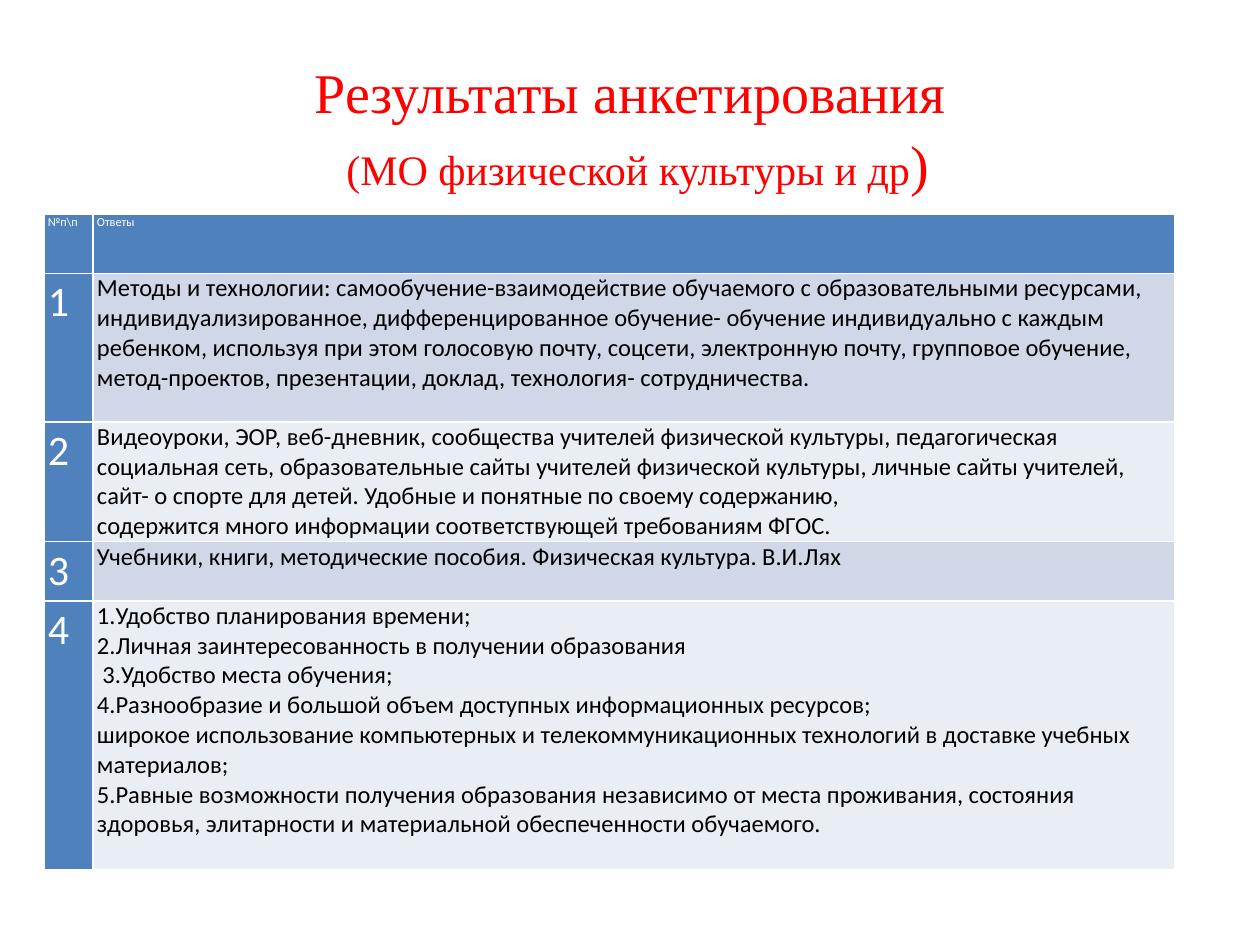
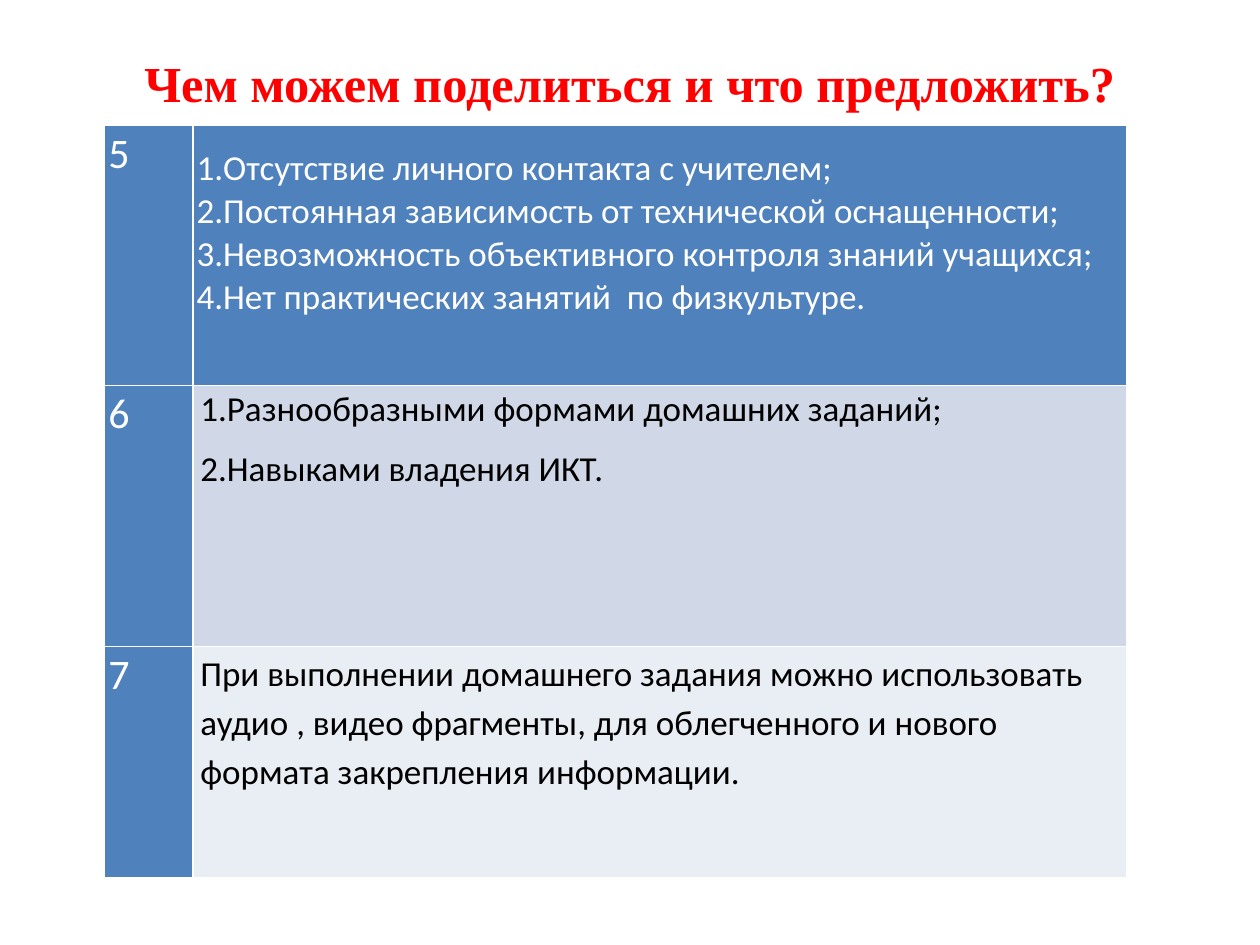
from pptx import Presentation
from pptx.dml.color import RGBColor
from pptx.enum.text import MSO_ANCHOR, PP_ALIGN
from pptx.util import Inches, Pt

WHITE = RGBColor(0xFF, 0xFF, 0xFF)
BLACK = RGBColor(0x00, 0x00, 0x00)
RED = RGBColor(0xFF, 0x00, 0x00)
BLUE = RGBColor(0x4F, 0x81, 0xBD)
BANDS = [RGBColor(0xD0, 0xD8, 0xE8), RGBColor(0xE9, 0xED, 0xF4)]
TITLE_FONT = "Times New Roman"
TABLE_FONT = "Calibri"
NUMBER_SIZE = 24
NUMBER_SPACING = (1.07, 8)
PLAIN_SPACING = (1, 0)

SURVEY_ANSWERS = [
    ["Методы и технологии: самообучение-взаимодействие обучаемого с образовательными ресурсами, "
     "индивидуализированное, дифференцированное обучение- обучение индивидуально с каждым ребенком, "
     "используя при этом голосовую почту, соцсети, электронную почту, групповое обучение, "
     "метод-проектов, презентации, доклад, технология- сотрудничества."],
    ["Видеоуроки, ЭОР, веб-дневник, сообщества учителей физической культуры, педагогическая "
     "социальная сеть, образовательные сайты учителей физической культуры, личные сайты учителей, "
     "сайт- о спорте для детей. Удобные и понятные по своему содержанию,",
     "содержится много информации соответствующей требованиям ФГОС."],
    ["Учебники, книги, методические пособия. Физическая культура. В.И.Лях"],
    ["1.Удобство планирования времени;",
     "2.Личная заинтересованность в получении образования",
     " 3.Удобство места обучения;",
     "4.Разнообразие и большой объем доступных информационных ресурсов;",
     "широкое использование компьютерных и телекоммуникационных технологий в доставке учебных материалов;",
     "5.Равные возможности получения образования независимо от места проживания, состояния здоровья, "
     "элитарности и материальной обеспеченности обучаемого."],
]
DRAWBACKS = [
    "1.Отсутствие личного контакта с учителем;",
    "2.Постоянная зависимость от технической оснащенности;",
    "3.Невозможность объективного контроля знаний учащихся;",
    "4.Нет практических занятий  по физкультуре.",
]
SHARED_SKILLS = ["1.Разнообразными формами домашних заданий;", "2.Навыками владения ИКТ."]
PROPOSAL = ["При выполнении домашнего задания можно использовать аудио , видео фрагменты, "
            "для облегченного и нового формата закрепления информации."]


def add_title(slide, box, lines, bold=False, anchor=MSO_ANCHOR.MIDDLE, top_inset=0.05):
    """Add a centred red title; each line is a list of (text, size) pieces."""
    text_frame = slide.shapes.add_textbox(*map(Inches, box)).text_frame
    text_frame.word_wrap = True
    text_frame.vertical_anchor = anchor
    text_frame.margin_top = Inches(top_inset)
    paragraph = text_frame.paragraphs[0]
    paragraph.alignment = PP_ALIGN.CENTER
    paragraph.line_spacing = 1.07
    for index, line in enumerate(lines):
        if index:
            paragraph.add_line_break()
        for text, size in line:
            run = paragraph.add_run()
            run.text = text
            run.font.name = TITLE_FONT
            run.font.size = Pt(size)
            run.font.bold = bold
            run.font.color.rgb = RED


def fill_cell(cell, lines, size, color, fill, spacing=PLAIN_SPACING, side=0.03, top=0):
    """Write paragraphs into a table cell and format them."""
    cell.fill.solid()
    cell.fill.fore_color.rgb = fill
    cell.margin_left = cell.margin_right = Inches(side)
    cell.margin_top, cell.margin_bottom = Inches(top), 0
    cell.vertical_anchor = MSO_ANCHOR.TOP
    cell.text_frame.text = "\n".join(lines)
    for paragraph in cell.text_frame.paragraphs:
        paragraph.line_spacing = spacing[0]
        paragraph.space_after = Pt(spacing[1])
        for run in paragraph.runs:
            run.font.name = TABLE_FONT
            run.font.size = Pt(size)
            run.font.bold = False
            run.font.color.rgb = color


def add_answer_table(slide, left, top, column_widths, row_heights):
    """Add an empty two-column table with the given grid."""
    box = (left, top, sum(column_widths), sum(row_heights))
    table = slide.shapes.add_table(len(row_heights), len(column_widths), *map(Inches, box)).table
    for column, width in zip(table.columns, column_widths):
        column.width = Inches(width)
    for row, height in zip(table.rows, row_heights):
        row.height = Inches(height)
    return table


def fill_number(table, row, number):
    """Write a question number into the first column."""
    fill_cell(table.cell(row, 0), [str(number)], NUMBER_SIZE, WHITE, BLUE, NUMBER_SPACING)


def build_survey_slide(slide):
    """Build the slide with the survey results."""
    add_title(slide, (0.84, 0.43, 8.33, 1.12), [
        [("Результаты анкетирования", 32)],
        [(" ", 32), ("(МО физической культуры и др", 24), (")", 32)],
    ])
    table = add_answer_table(slide, 0.35, 1.7, [0.39, 8.58], [0.47, 1.18, 0.95, 0.47, 2.13])
    for column, heading in enumerate(["№п\\п", "Ответы"]):
        fill_cell(table.cell(0, column), [heading], 7, WHITE, BLUE, NUMBER_SPACING)
    for row, answer in enumerate(SURVEY_ANSWERS, start=1):
        fill_number(table, row, row)
        fill_cell(table.cell(row, 1), answer, 14, BLACK, BANDS[(row - 1) % 2])


def build_proposal_slide(slide):
    """Build the slide with drawbacks and proposals."""
    add_title(slide, (0.5, 0.3, 9, 1.25), [[("Чем можем поделиться и что предложить?", 28.8)]],
              bold=True, anchor=MSO_ANCHOR.TOP, top_inset=0.08)
    table = add_answer_table(slide, 0.83, 0.99, [0.7, 7.41], [2.07, 2.07, 1.84])
    for row in range(3):
        fill_number(table, row, row + 5)
    fill_cell(table.cell(0, 1), DRAWBACKS, 20, WHITE, BLUE, top=0.18)
    fill_cell(table.cell(1, 1), SHARED_SKILLS, 20, BLACK, BANDS[0], NUMBER_SPACING, side=0.06)
    fill_cell(table.cell(2, 1), PROPOSAL, 20, BLACK, BANDS[1], (1.15, 10), side=0.06)


def main():
    """Create the presentation and save it."""
    presentation = Presentation()
    presentation.slide_width, presentation.slide_height = Inches(10), Inches(7.5)
    for build_slide in (build_survey_slide, build_proposal_slide):
        build_slide(presentation.slides.add_slide(presentation.slide_layouts[6]))
    presentation.save("out.pptx")


if __name__ == "__main__":
    main()
